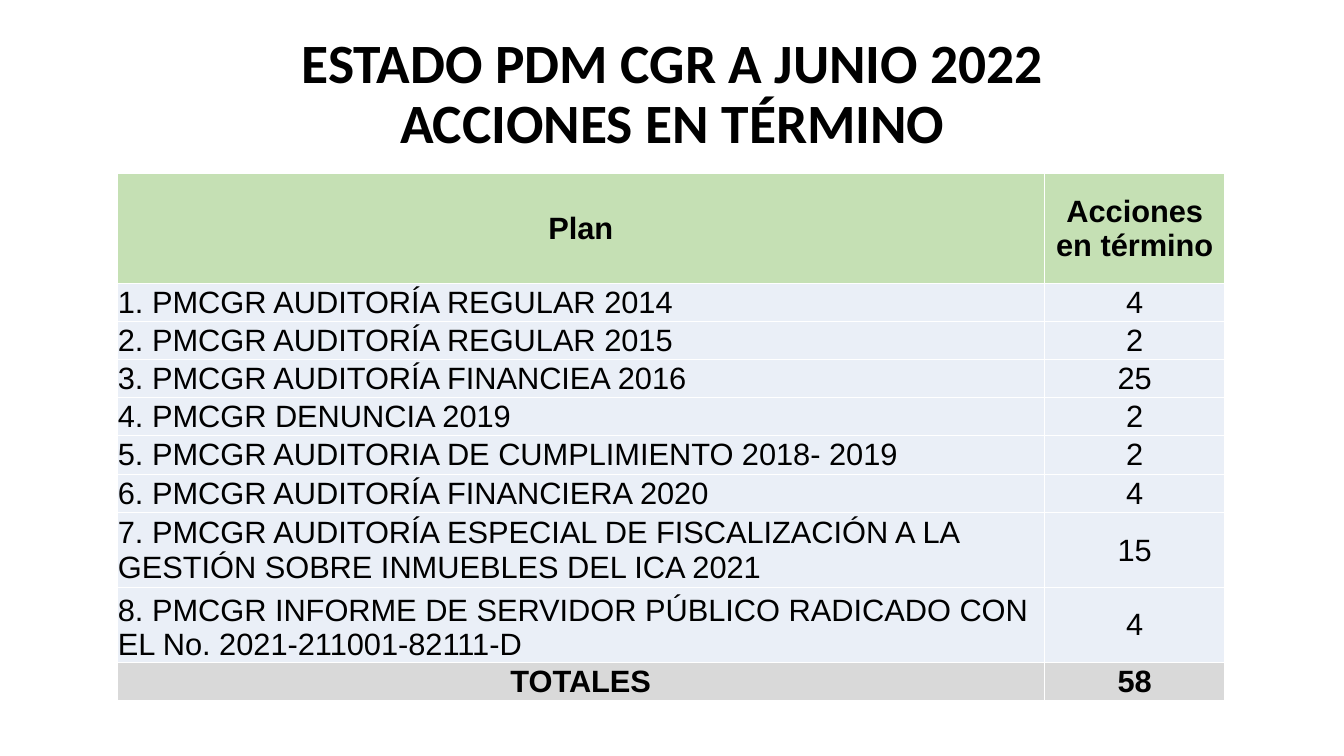
from lxml import etree
from pptx import Presentation, util as u
from pptx.dml.color import RGBColor
from pptx.enum import text
from pptx.oxml import ns

HUES = {"ink": "000000", "head": "C5E0B4", "body": "EAEFF7",
        "total": "D9D9D9", "line": "FFFFFF"}
MID, LOW = text.MSO_ANCHOR.MIDDLE, text.MSO_ANCHOR.BOTTOM
LEFT, CENTER = text.PP_ALIGN.LEFT, text.PP_ALIGN.CENTER
TITLE = {"name": "Calibri", "size": u.Pt(39.6), "bold": True}
PLAIN = {"name": "Arial", "size": u.Pt(22), "bold": False}
STRONG = {**PLAIN, "bold": True}
INSET = {"margin_left": u.Inches(0.01), "margin_right": u.Inches(0.01),
         "margin_top": u.Inches(0.01), "margin_bottom": 0}
PLANS = [
    ("1. PMCGR AUDITORÍA REGULAR 2014", 4, 0.32),
    ("2. PMCGR AUDITORÍA REGULAR 2015", 2, 0.32),
    ("3. PMCGR AUDITORÍA FINANCIEA 2016", 25, 0.32),
    ("4. PMCGR DENUNCIA 2019", 2, 0.32),
    ("5. PMCGR AUDITORIA DE CUMPLIMIENTO 2018- 2019", 2, 0.39),
    ("6. PMCGR AUDITORÍA FINANCIERA 2020", 4, 0.32),
    ("7. PMCGR AUDITORÍA ESPECIAL DE FISCALIZACIÓN A LA "
     "GESTIÓN SOBRE INMUEBLES DEL ICA 2021", 15, 0.62),
    ("8. PMCGR INFORME DE SERVIDOR PÚBLICO RADICADO CON "
     "EL No. 2021-211001-82111-D", 4, 0.62),
]


def assign(item, values):
    for key, value in values.items():
        setattr(item, key, value)


def write(frame, words, style, align):
    frame.text = words
    para = frame.paragraphs[0]
    para.alignment = align
    for run in para.runs:
        assign(run.font, style)
        run.font.color.rgb = RGBColor.from_string(HUES["ink"])
    return para


def border(cell):
    props = cell._tc.get_or_add_tcPr()
    for side in ("a:lnL", "a:lnR", "a:lnT", "a:lnB"):
        line = etree.SubElement(props, ns.qn(side), w=str(u.Pt(1)))
        solid = etree.SubElement(line, ns.qn("a:solidFill"))
        etree.SubElement(solid, ns.qn("a:srgbClr"), val=HUES["line"])


def title(slide, box, words):
    frame = slide.shapes.add_textbox(*map(u.Inches, box)).text_frame
    assign(frame, {"word_wrap": True, "vertical_anchor": MID})
    write(frame, words, TITLE, CENTER).line_spacing = 0.9


def table(slide, box, plans):
    total = sum(count for _, count, _ in plans)
    rows = [("Plan", "Acciones en término", 1.09, "head", STRONG, CENTER)]
    rows += [(plan, str(count), high, "body", PLAIN, LEFT)
             for plan, count, high in plans]
    rows.append(("TOTALES", str(total), 0.32, "total", STRONG, CENTER))
    grid = slide.shapes.add_table(len(rows), 2, *map(u.Inches, box)).table
    wide = 9.2
    for col, size in zip(grid.columns, (wide, box[2] - wide)):
        col.width = u.Inches(size)
    for r, (plan, count, high, hue, style, align) in enumerate(rows):
        grid.rows[r].height = u.Inches(high)
        for c, (words, side) in enumerate(((plan, align), (count, CENTER))):
            cell = grid.cell(r, c)
            last = r == len(plans) and c == 0
            assign(cell, {**INSET, "vertical_anchor": LOW if last else MID})
            border(cell)
            cell.fill.solid()
            cell.fill.fore_color.rgb = RGBColor.from_string(HUES[hue])
            write(cell.text_frame, words, style, side)


def main():
    deck = Presentation()
    assign(deck, {"slide_width": u.Inches(13.33),
                  "slide_height": u.Inches(7.5)})
    slide = deck.slides.add_slide(deck.slide_layouts[6])
    title(slide, (0.92, 0.4, 11.5, 1.09),
          "ESTADO PDM CGR A JUNIO 2022\vACCIONES EN TÉRMINO")
    table(slide, (1.16, 1.72, 10.99, 4.64), PLANS)
    deck.save("out.pptx")


if __name__ == "__main__":
    main()
